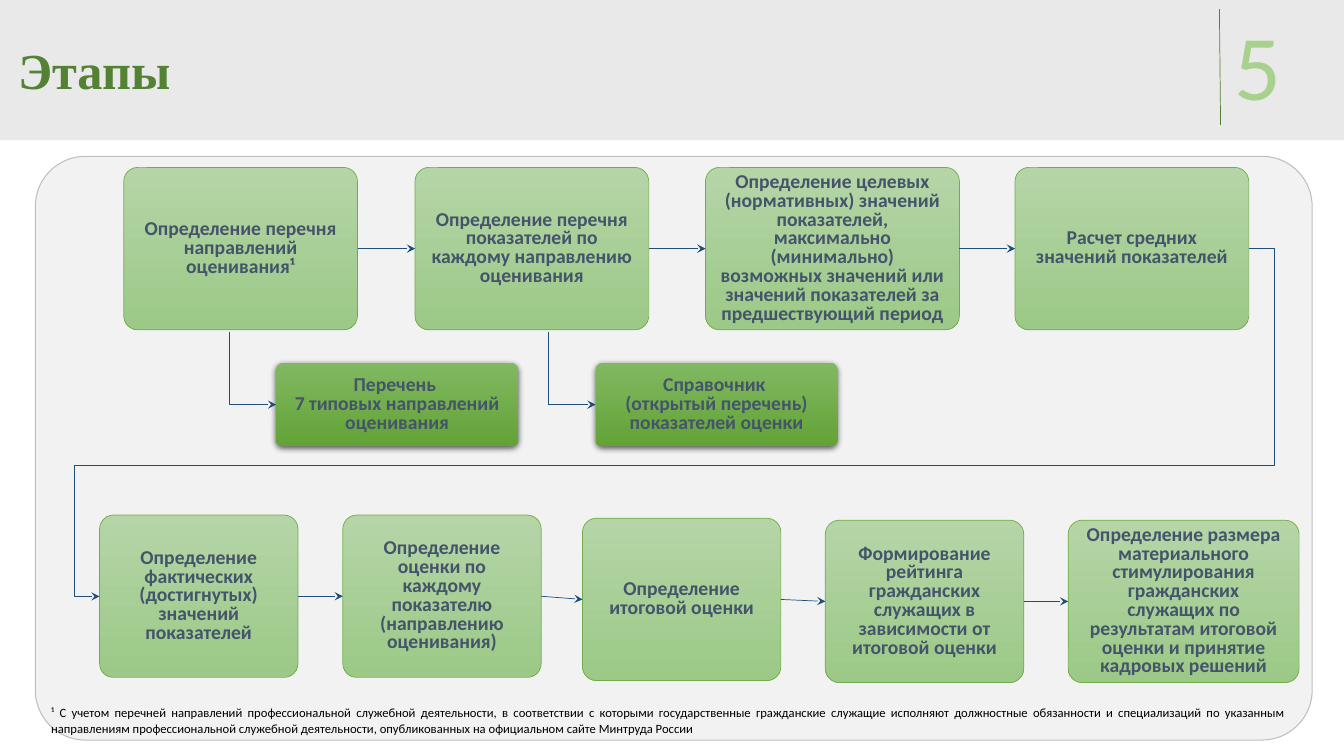
from lxml import etree
from pptx import Presentation
from pptx.dml.color import RGBColor
from pptx.enum.shapes import MSO_CONNECTOR, MSO_SHAPE
from pptx.enum.text import MSO_ANCHOR, MSO_AUTO_SIZE, PP_ALIGN
from pptx.oxml.ns import qn
from pptx.util import Cm, Pt

RECT, ROUNDED = MSO_SHAPE.RECTANGLE, MSO_SHAPE.ROUNDED_RECTANGLE
STRAIGHT, ELBOW = MSO_CONNECTOR.STRAIGHT, MSO_CONNECTOR.ELBOW
LEFT, CENTER, RIGHT, JUSTIFY = PP_ALIGN.LEFT, PP_ALIGN.CENTER, PP_ALIGN.RIGHT, PP_ALIGN.JUSTIFY
MIDDLE, TOP = MSO_ANCHOR.MIDDLE, MSO_ANCHOR.TOP
GROW = MSO_AUTO_SIZE.SHAPE_TO_FIT_TEXT
LEFT_SIDE, RIGHT_SIDE = 1, 3

BLACK = RGBColor(0x00, 0x00, 0x00)
HEADER_GRAY = RGBColor(0xAF, 0xAB, 0xAB)
PANEL_FILL = RGBColor(0xF2, 0xF2, 0xF2)
PANEL_EDGE = RGBColor(0xBF, 0xBF, 0xBF)
TITLE_GREEN = RGBColor(0x54, 0x82, 0x35)
NUMBER_GREEN = RGBColor(0xA9, 0xD1, 0x8E)
STEP_EDGE = RGBColor(0x70, 0xAD, 0x47)
STEP_COLORS = (RGBColor(0xB5, 0xD5, 0xA7), RGBColor(0x9C, 0xC9, 0x87))
LIST_COLORS = (RGBColor(0x81, 0xB8, 0x61), RGBColor(0x62, 0xA3, 0x36))
STEP_TEXT = RGBColor(0x44, 0x54, 0x6A)
ARROW_BLUE = RGBColor(0x1F, 0x4E, 0x79)

STEP_HEIGHT = 4.09
TOP_ROW = 4.22
TOP_STEPS = [
    (3.12, 5.89, "Определение перечня направлений оценивания¹"),
    (10.46, 5.89, "Определение перечня показателей по каждому направлению оценивания"),
    (17.78, 6.4, "Определение целевых (нормативных) значений показателей, максимально "
                 "(минимально) возможных значений или значений показателей за предшествующий период"),
    (25.58, 5.89, "Расчет средних значений показателей"),
]
BOTTOM_STEPS = [
    (2.51, 12.98, 5, "Определение фактических (достигнутых) значений показателей"),
    (8.64, 12.98, 5, "Определение оценки по каждому показателю\n(направлению оценивания)"),
    (14.68, 13.06, 5, "Определение итоговой оценки"),
    (20.8, 13.11, 5, "Формирование рейтинга гражданских служащих в зависимости от итоговой оценки"),
    (26.92, 13.11, 5.82, "Определение размера материального стимулирования гражданских служащих "
                         "по результатам итоговой оценки и принятие кадровых решений"),
]
LISTS_TOP, LIST_WIDTH, LIST_HEIGHT = 9.14, 6.1, 2.11
LISTS = [
    (6.96, "Перечень \v7 типовых направлений оценивания"),
    (15.01, "Справочник \v(открытый перечень)\vпоказателей оценки"),
]
BRANCH_TOP, BRANCH_RUN = 8.36, 1.19
FOOTNOTE = (
    "¹ С учетом перечней направлений профессиональной служебной деятельности, в соответствии с которыми "
    "государственные гражданские служащие исполняют должностные обязанности и специализаций по указанным "
    "направлениям профессиональной служебной деятельности, опубликованных на официальном сайте Минтруда России"
)


class StagesSlide:
    """Draws the elements of the stages slide in one shared style."""

    def __init__(self, slide):
        self.slide = slide
        self.shapes = slide.shapes

    def set_text(self, frame, text, size, color, align, anchor=MIDDLE, font="Calibri", bold=False, spacing=1.0):
        frame.text = text
        frame.word_wrap = True
        frame.vertical_anchor = anchor
        for paragraph in frame.paragraphs:
            paragraph.alignment = align
            paragraph.line_spacing = spacing
            for run in paragraph.runs:
                run.font.name, run.font.size = font, Pt(size)
                run.font.bold, run.font.color.rgb = bold, color

    def title(self, text, left, top, width, height):
        title = self.shapes.title
        title.left, title.top, title.width, title.height = map(Cm, (left, top, width, height))
        self.set_text(title.text_frame, text, 36, TITLE_GREEN, LEFT,
                      font="Times New Roman", bold=True, spacing=0.9)

    def label(self, text, left, top, width, height, *style):
        label = self.shapes.add_textbox(*map(Cm, (left, top, width, height)))
        self.set_text(label.text_frame, text, *style)
        return label.text_frame

    def area(self, kind, left, top, width, height, fill=None, edge=None, weight=0.5):
        area = self.shapes.add_shape(kind, *map(Cm, (left, top, width, height)))
        area.shadow.inherit = False
        if kind == ROUNDED:
            area.adjustments[0] = 0.086
        if fill:
            area.fill.solid()
            area.fill.fore_color.rgb = fill
        if edge:
            area.line.color.rgb = edge
            area.line.width = Pt(weight)
        else:
            area.line.fill.background()
        return area

    def header(self, width, height):
        header = self.area(RECT, 0, 0, width, height, HEADER_GRAY)
        tint = header.element.spPr.find(qn("a:solidFill"))[0]
        etree.SubElement(tint, qn("a:alpha"), val="25000")
        self.shapes.title.element.addprevious(header.element)

    def box(self, text, left, top, width, height, colors, edge=None):
        box = self.area(ROUNDED, left, top, width, height, edge=edge)
        box.fill.gradient()
        box.fill.gradient_angle = 270
        for stop, color in zip(box.fill.gradient_stops, colors):
            stop.color.rgb = color
        self.set_text(box.text_frame, text, 14, STEP_TEXT, CENTER, bold=True, spacing=0.8)
        return box

    def raised_box(self, *content):
        box = self.box(*content)
        effects = box.element.spPr.find(qn("a:effectLst"))
        shadow = etree.SubElement(effects, qn("a:outerShdw"), blurRad=str(Pt(4.5)), dist=str(Pt(1.5)),
                                  dir="5400000", algn="ctr", rotWithShape="0")
        tint = etree.SubElement(shadow, qn("a:srgbClr"), val=str(BLACK))
        etree.SubElement(tint, qn("a:alpha"), val="63000")

    def line(self, kind, begin, end, color, arrow=True):
        line = self.shapes.add_connector(kind, *map(Cm, (*begin, *end)))
        line.line.color.rgb = color
        line.line.width = Pt(0.5)
        properties = line.element.spPr
        if arrow:
            etree.SubElement(properties.find(qn("a:ln")), qn("a:tailEnd"), type="stealth")
        etree.SubElement(properties, qn("a:effectLst"))
        return line

    def link(self, source, target):
        arrow = self.line(STRAIGHT, (0, 0), (1, 0), ARROW_BLUE)
        arrow.begin_connect(source, RIGHT_SIDE)
        arrow.end_connect(target, LEFT_SIDE)

    def elbow(self, begin, end, preset, bends=()):
        elbow = self.line(ELBOW, begin, end, ARROW_BLUE)
        geometry = elbow.element.spPr.find(qn("a:prstGeom"))
        geometry.set("prst", preset)
        for number, bend in enumerate(bends, 1):
            etree.SubElement(geometry.find(qn("a:avLst")), qn("a:gd"), name=f"adj{number}", fmla=f"val {bend}")
        return elbow

    def branch(self, left, top, run, drop):
        middle_x, middle_y = left + run / 2, top + drop / 2
        branch = self.elbow((middle_x + drop / 2, middle_y - run / 2),
                            (middle_x - drop / 2, middle_y + run / 2), "bentConnector2")
        branch.element.spPr.find(qn("a:xfrm")).set("rot", "16200000")


def main():
    deck = Presentation()
    deck.slide_width, deck.slide_height = Cm(33.87), Cm(19.05)
    stages = StagesSlide(deck.slides.add_slide(deck.slide_layouts[5]))

    stages.title("Этапы", 0.2, 0, 21.34, 3.68)
    stages.header(33.87, 3.53)
    number = stages.label("5", 30.91, 0.58, 1.47, 2.06, 66, NUMBER_GREEN, RIGHT)
    number.margin_left, number.margin_right = 0, Cm(0.08)
    stages.line(STRAIGHT, (30.73, 0.23), (30.76, 3.15), TITLE_GREEN, arrow=False)
    stages.area(ROUNDED, 0.89, 3.94, 32.18, 14.71, PANEL_FILL, PANEL_EDGE, 0.75)

    top_row = [stages.box(text, left, TOP_ROW, width, STEP_HEIGHT, STEP_COLORS, STEP_EDGE)
               for left, width, text in TOP_STEPS]
    bottom_row = [stages.box(text, left, top, width, STEP_HEIGHT, STEP_COLORS, STEP_EDGE)
                  for left, top, width, text in BOTTOM_STEPS]
    for row in (top_row, bottom_row):
        for source, target in zip(row, row[1:]):
            stages.link(source, target)

    for left, text in LISTS:
        stages.raised_box(text, left, LISTS_TOP, LIST_WIDTH, LIST_HEIGHT, LIST_COLORS)
        stages.branch(left - BRANCH_RUN, BRANCH_TOP, BRANCH_RUN, LISTS_TOP + LIST_HEIGHT / 2 - BRANCH_TOP)
    stages.elbow((31.47, 6.27), (2.51, 15.03), "bentConnector5", (-2200, 62400, 102200))

    footnote = stages.label(FOOTNOTE, 1.04, 17.65, 31.55, 1.02, 9, BLACK, JUSTIFY, TOP)
    footnote.auto_size = GROW
    deck.save("out.pptx")


if __name__ == "__main__":
    main()
